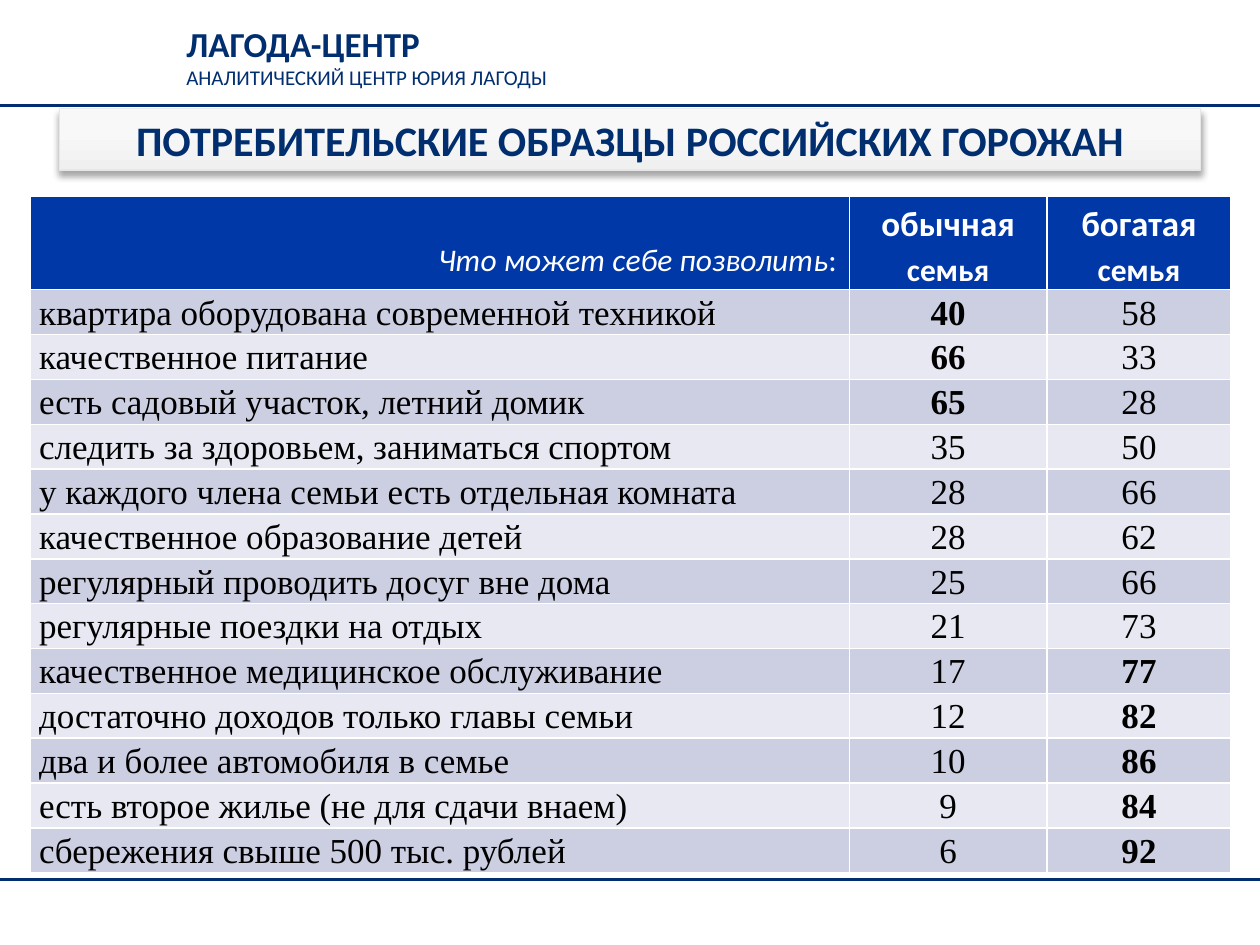
import pptx
import pptx.dml.color
import pptx.enum.shapes
import pptx.enum.text
import pptx.oxml
import pptx.oxml.ns
import pptx.util
from dataclasses import dataclass
from pptx.util import Inches

RGB = pptx.dml.color.RGBColor.from_string
ALIGN = pptx.enum.text.PP_ALIGN
ANCHOR = pptx.enum.text.MSO_ANCHOR
NS = pptx.oxml.ns.nsdecls("a")


@dataclass(frozen=True)
class Theme:
    navy: str = "002E6E"
    header: str = "0038A8"
    bands: tuple = ("CCCEE1", "E7E8F1")
    white: str = "FFFFFF"
    black: str = "000000"
    title_edge: str = "E7E7E7"
    title_shades: tuple = ("F0F0F0", "F8F8F8", "FAFAFA")
    sans: str = "Calibri"
    serif: str = "Times New Roman"
    title_size: int = 24
    large: int = 20
    medium: int = 18
    small: int = 12


theme = Theme()


def style_font(font, name, size, color, bold=False):
    font.name = name
    font.size = pptx.util.Pt(size)
    font.color.rgb = RGB(color)
    font.bold = bold


def paint_cell(cell, color):
    """Fill a cell and give it thin white borders."""
    cell.fill.solid()
    cell.fill.fore_color.rgb = RGB(color)
    properties = cell._tc.get_or_add_tcPr()
    for position, side in enumerate("LRTB"):
        properties.insert(position, pptx.oxml.parse_xml(
            f'<a:ln{side} {NS} w="{pptx.util.Pt(1)}"><a:solidFill>'
            f'<a:srgbClr val="{theme.white}"/></a:solidFill></a:ln{side}>'))


presentation = pptx.Presentation()
presentation.slide_width = Inches(10)
presentation.slide_height = Inches(7.5)
slide = presentation.slides.add_slide(presentation.slide_layouts[5])

# Organisation name and the two rules
organisation = slide.shapes.add_textbox(
    Inches(1.38), Inches(0.13), Inches(5.28), Inches(0.64)).text_frame
organisation.word_wrap = True
organisation.text = "ЛАГОДА-ЦЕНТР\nАНАЛИТИЧЕСКИЙ ЦЕНТР ЮРИЯ ЛАГОДЫ"
name, description = organisation.paragraphs
style_font(name.font, theme.sans, theme.large, theme.navy, bold=True)
style_font(description.font, theme.sans, theme.small, theme.navy)

for y in (0.84, 6.98):
    rule = slide.shapes.add_connector(
        pptx.enum.shapes.MSO_CONNECTOR.STRAIGHT,
        Inches(0), Inches(y), Inches(10), Inches(y))
    rule.line.color.rgb = RGB(theme.navy)
    rule.line.width = pptx.util.Pt(1.5)
    rule._element.spPr.append(pptx.oxml.parse_xml(f"<a:effectLst {NS}/>"))

# Title on a shaded, shadowed plate
title = slide.shapes.title
title.left, title.top = Inches(0.47), Inches(0.86)
title.width, title.height = Inches(9.06), Inches(0.49)
title.fill.gradient()
title.fill.gradient_angle = 90
dark, middle, light = theme.title_shades
for stop, shade, position in zip(title.fill.gradient_stops, (dark, light), (0, 1)):
    stop.color.rgb = RGB(shade)
    stop.position = position
plate = title._element.spPr
plate.find(".//" + pptx.oxml.ns.qn("a:gsLst")).insert(1, pptx.oxml.parse_xml(
    f'<a:gs {NS} pos="65000"><a:srgbClr val="{middle}"/></a:gs>'))
title.line.color.rgb = RGB(theme.title_edge)
title.line.width = pptx.util.Pt(0.75)
plate.append(pptx.oxml.parse_xml(
    f'<a:effectLst {NS}><a:outerShdw blurRad="{pptx.util.Pt(4)}" '
    f'dist="{pptx.util.Pt(3)}" dir="5400000" rotWithShape="0">'
    f'<a:srgbClr val="{theme.black}"><a:alpha val="35000"/></a:srgbClr>'
    '</a:outerShdw></a:effectLst>'))
title.text_frame.text = "ПОТРЕБИТЕЛЬСКИЕ ОБРАЗЦЫ РОССИЙСКИХ ГОРОЖАН"
title.text_frame.vertical_anchor = ANCHOR.MIDDLE
heading = title.text_frame.paragraphs[0]
heading.alignment = ALIGN.CENTER
style_font(heading.font, theme.sans, theme.title_size, theme.navy, bold=True)

# Table: what an ordinary and a rich family can afford
affordable = [
    ("квартира оборудована современной техникой", 40, 58),
    ("качественное питание", 66, 33),
    ("есть садовый участок, летний домик", 65, 28),
    ("следить за здоровьем, заниматься спортом", 35, 50),
    ("у каждого члена семьи есть отдельная комната", 28, 66),
    ("качественное образование детей", 28, 62),
    ("регулярный проводить досуг вне дома", 25, 66),
    ("регулярные поездки на отдых", 21, 73),
    ("качественное медицинское обслуживание", 17, 77),
    ("достаточно доходов только главы семьи", 12, 82),
    ("два и более автомобиля в семье", 10, 86),
    ("есть второе жилье (не для сдачи внаем)", 9, 84),
    ("сбережения свыше 500 тыс. рублей", 6, 92),
]
bold_from = {1: 40, 2: 77}  # column: smallest emphasised value
header_height, body_height = 0.74, 4.63

table = slide.shapes.add_table(
    len(affordable) + 1, 3, Inches(0.24), Inches(1.56),
    Inches(9.53), Inches(header_height + body_height)).table
for column, width in zip(table.columns, (6.5, 1.57, 1.46)):
    column.width = Inches(width)
for row in table.rows:
    row.height = Inches(body_height / len(affordable))
table.rows[0].height = Inches(header_height)

question = table.cell(0, 0)
paint_cell(question, theme.header)
question.vertical_anchor = ANCHOR.BOTTOM
question.margin_bottom = Inches(0.08)
question_line = question.text_frame.paragraphs[0]
question_line.alignment = ALIGN.RIGHT
style_font(question_line.font, theme.sans, theme.medium, theme.white)
for text, italic in (("Что может себе позволить", True), (":", False)):
    run = question_line.add_run()
    run.text = text
    style_font(run.font, theme.sans, theme.medium, theme.white)
    run.font.italic = italic

for column, family in enumerate(("обычная", "богатая"), start=1):
    cell = table.cell(0, column)
    paint_cell(cell, theme.header)
    for text, size in ((family, theme.large), (" семья", theme.medium)):
        run = cell.text_frame.paragraphs[0].add_run()
        run.text = text
        style_font(run.font, theme.sans, size, theme.white, bold=True)

for row, entry in enumerate(affordable, start=1):
    for column, value in enumerate(entry):
        cell = table.cell(row, column)
        paint_cell(cell, theme.bands[(row - 1) % 2])
        cell.text = str(value)
        emphasised = column > 0 and value >= bold_from[column]
        style_font(cell.text_frame.paragraphs[0].font, theme.serif,
                   theme.large, theme.black, bold=emphasised)

for row in range(len(affordable) + 1):
    for column in range(3):
        if (row, column) == (0, 0):
            continue
        cell = table.cell(row, column)
        cell.vertical_anchor = ANCHOR.MIDDLE
        cell.margin_left = cell.margin_right = Inches(0.07)
        cell.margin_top = cell.margin_bottom = 0
        line = cell.text_frame.paragraphs[0]
        line.line_spacing = 1.05 if row else 1.15
        line.alignment = ALIGN.CENTER if column else ALIGN.LEFT

presentation.save("out.pptx")
